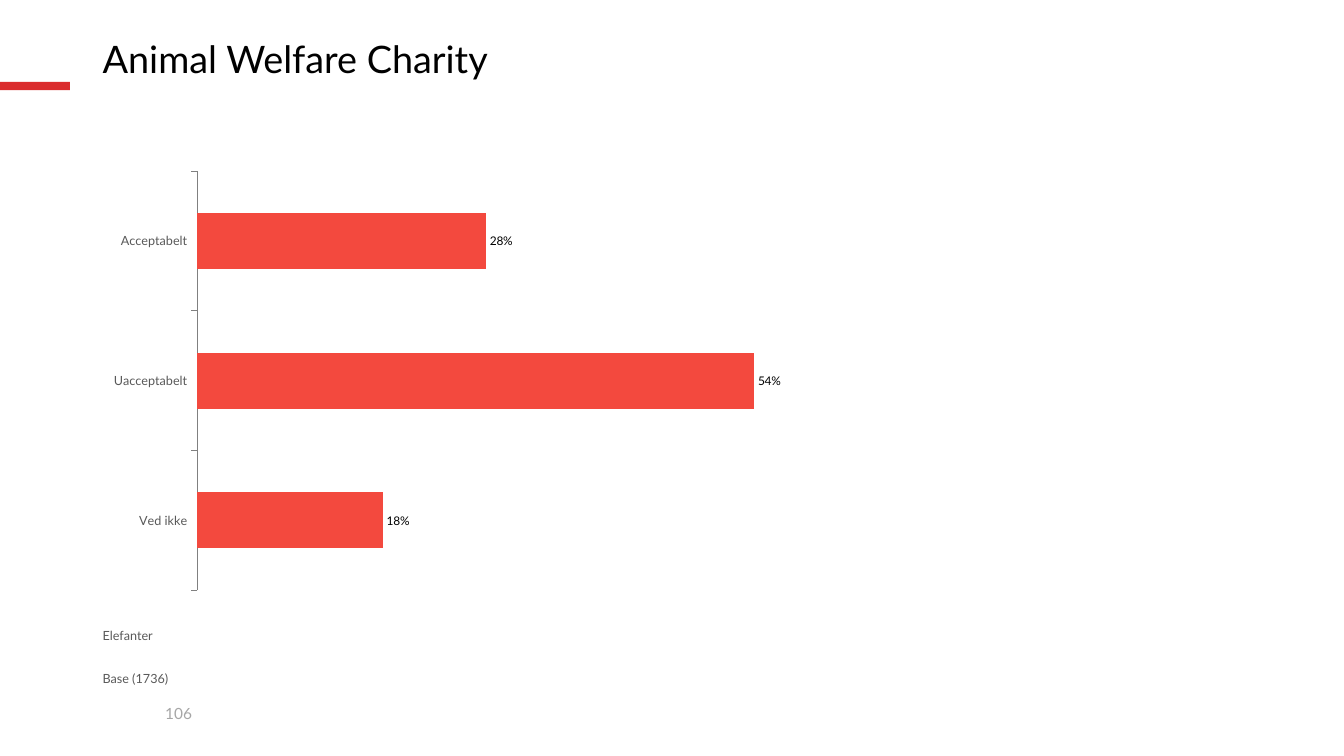
from lxml import etree
from pptx import Presentation
from pptx import util as u
from pptx.chart import data as chart_data
from pptx.dml import color
from pptx.enum import chart as charts, shapes, text
from pptx.oxml import ns

COLORS = {
    "accent": "DA2C2D",
    "bar": "F3493E",
    "title": "000000",
    "body": "595959",
    "number": "A6A6A6",
    "axis": "808080",
}
LEFT, WIDTH = 66.24, 828


class SlideBuilder:
    def __init__(self, page, typeface):
        self.page = page
        self.typeface = typeface

    def rgb(self, name):
        return color.RGBColor.from_string(COLORS[name])

    def style(self, font, size, name):
        font.name = self.typeface
        font.size = u.Pt(size)
        font.color.rgb = self.rgb(name)

    def bar(self, left, top, width, height, name):
        shape = self.page.shapes.add_shape(
            shapes.MSO_SHAPE.RECTANGLE, *map(u.Pt, (left, top, width, height)))
        shape.shadow.inherit = False
        shape.fill.solid()
        shape.fill.fore_color.rgb = self.rgb(name)
        shape.line.fill.background()

    def label(self, words, left, top, width, height, size, name,
              anchor=text.MSO_ANCHOR.TOP, spacing=None):
        box = self.page.shapes.add_textbox(*map(u.Pt, (left, top, width, height)))
        frame = box.text_frame
        frame.word_wrap = True
        frame.vertical_anchor = anchor
        paragraph = frame.paragraphs[0]
        paragraph.text = words
        paragraph.line_spacing = spacing
        self.style(paragraph.font, size, name)

    def bar_chart(self, left, top, width, height, shares, plot):
        source = chart_data.CategoryChartData(number_format="0%")
        source.categories = list(shares)
        source.add_series("Series 1", list(shares.values()))
        chart = self.page.shapes.add_chart(
            charts.XL_CHART_TYPE.BAR_CLUSTERED,
            *map(u.Pt, (left, top, width, height)), source).chart
        chart.has_legend = False
        chart.has_title = False
        self.style(chart.font, 18, "title")
        self.style_axes(chart)
        bars = chart.plots[0]
        bars.gap_width = 150
        bars.overlap = -10
        bars.vary_by_categories = False
        fill = bars.series[0].format.fill
        fill.solid()
        fill.fore_color.rgb = self.rgb("bar")
        labels = bars.series[0].data_labels
        labels.show_value = True
        labels.position = charts.XL_LABEL_POSITION.OUTSIDE_END
        labels.number_format = "0%"
        labels.number_format_is_linked = False
        self.style(labels.font, 8.5, "title")
        self.place_plot(chart, plot)

    def style_axes(self, chart):
        categories, values = chart.category_axis, chart.value_axis
        categories.tick_label_position = charts.XL_TICK_LABEL_POSITION.LOW
        categories.major_tick_mark = charts.XL_TICK_MARK.OUTSIDE
        categories.format.line.color.rgb = self.rgb("axis")
        categories.format.line.width = u.Pt(0.75)
        self.style(categories.tick_labels.font, 9, "body")
        values.visible = False
        values.has_major_gridlines = False
        values.minimum_scale, values.maximum_scale = 0, 1
        values.major_unit = 0.1
        values.tick_labels.number_format = "0.00%"
        values.tick_labels.number_format_is_linked = False

    def place_plot(self, chart, plot):
        area = chart.plots[0]._element.getparent()
        for old in area.findall(ns.qn("c:layout")):
            area.remove(old)
        layout = etree.Element(ns.qn("c:layout"))
        manual = etree.SubElement(layout, ns.qn("c:manualLayout"))
        settings = {"layoutTarget": "inner", "xMode": "edge", "yMode": "edge", **plot}
        for tag, value in settings.items():
            etree.SubElement(manual, ns.qn(f"c:{tag}")).set("val", str(value))
        area.insert(0, layout)


def main():
    deck = Presentation()
    deck.slide_width, deck.slide_height = u.Pt(960), u.Pt(540)
    builder = SlideBuilder(deck.slides.add_slide(deck.slide_layouts[6]), "Lato")
    builder.bar(0, 58.5, 50, 6, "accent")
    builder.label("106", 110.9, 499.7, 49, 21, 11, "number")
    builder.label("Animal Welfare Charity", LEFT, 25.2, WIDTH, 36.7, 27, "title",
                  text.MSO_ANCHOR.MIDDLE, 0.9)
    shares = {"Ved ikke": 0.18, "Uacceptabelt": 0.54, "Acceptabelt": 0.28}
    builder.bar_chart(LEFT, 116, WIDTH, 312, shares,
                      {"x": 0.09, "y": 0.02, "w": 0.89, "h": 0.96})
    builder.label("Elefanter", LEFT, 445, WIDTH, 31, 9, "body")
    builder.label("Base (1736)", LEFT, 476, WIDTH, 20, 9, "body")
    deck.save("out.pptx")


if __name__ == "__main__":
    main()
